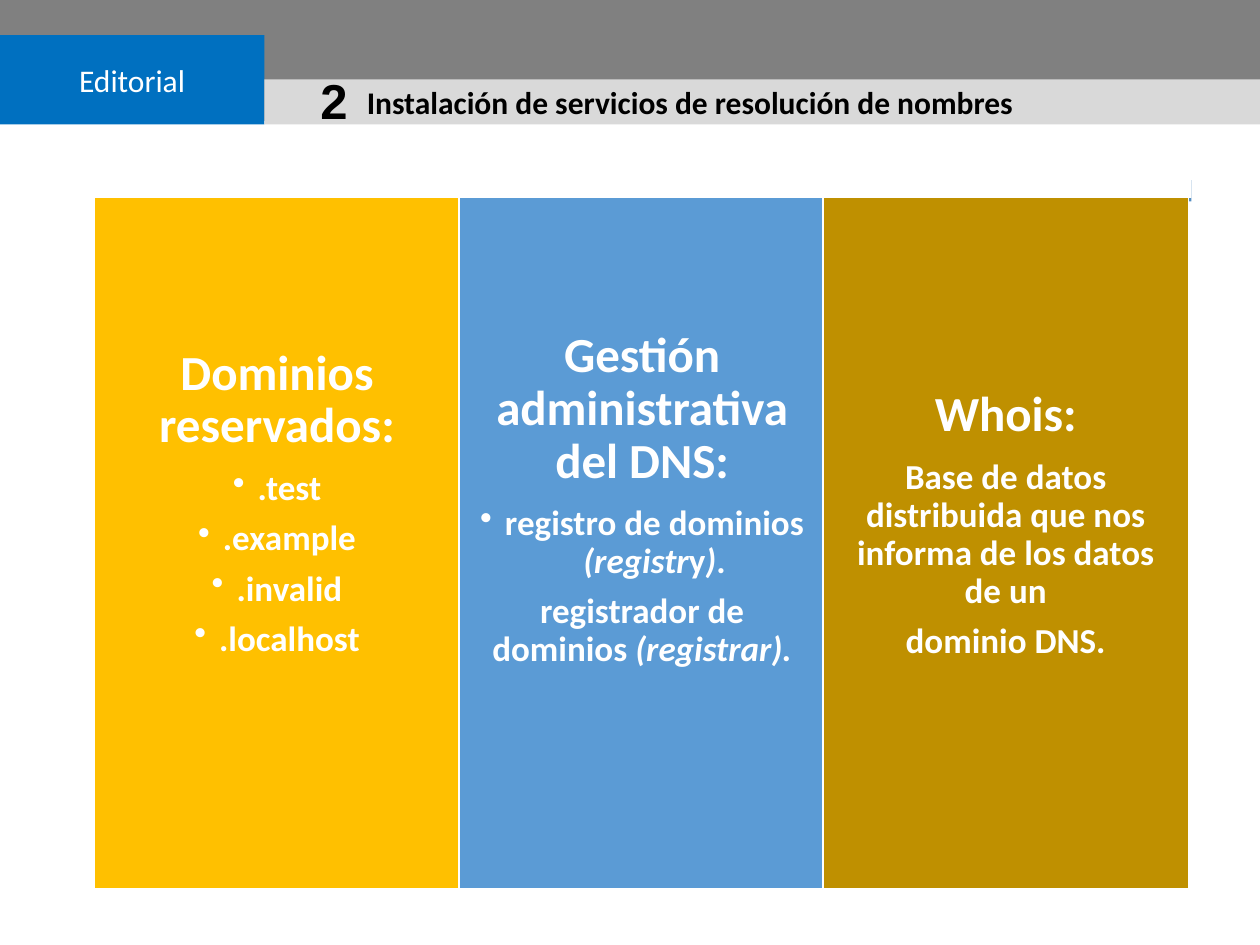
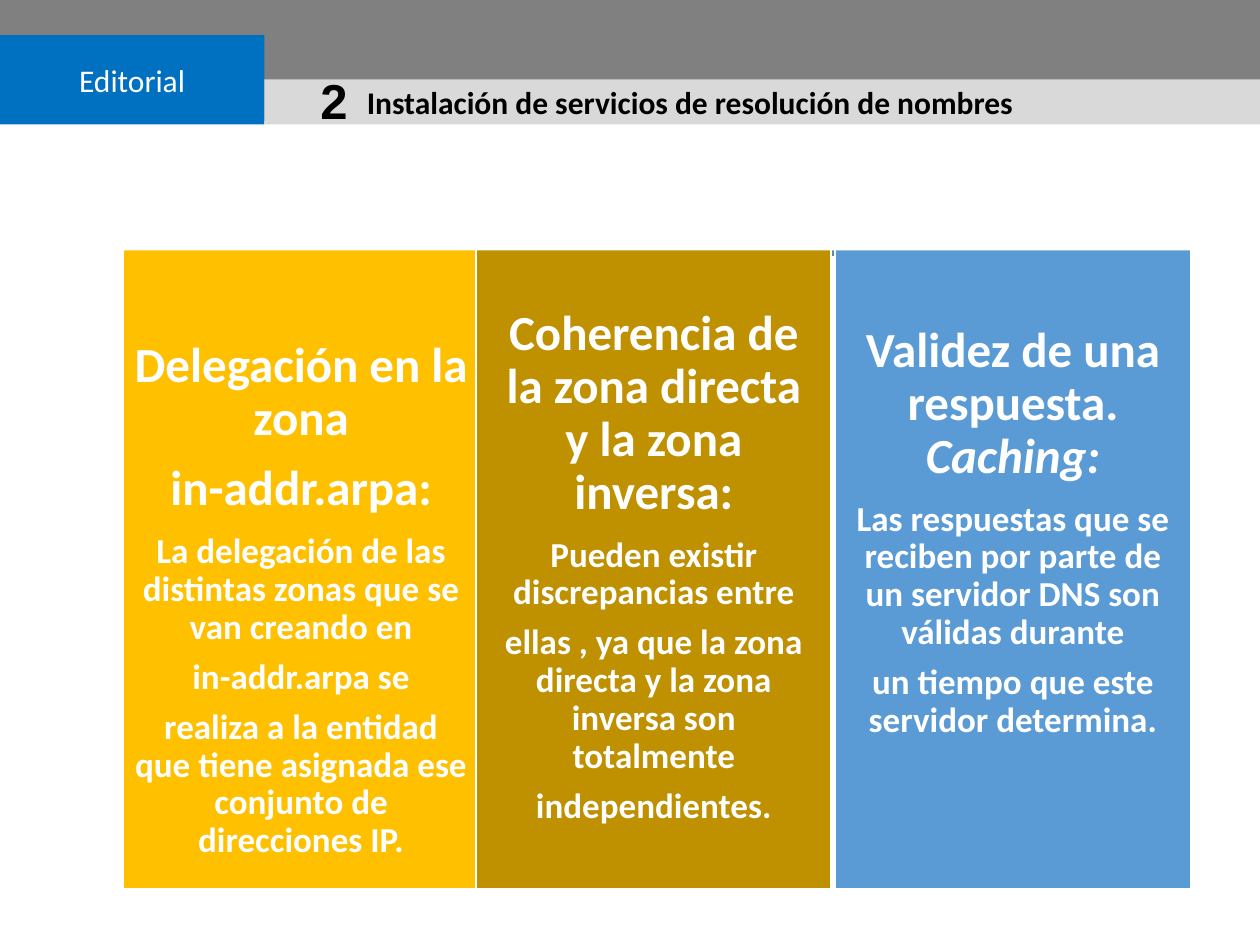
"""Builds two slides of three coloured columns about DNS domains, zones and answers."""
from lxml import etree
from pptx import Presentation
from pptx.dml.color import RGBColor
from pptx.enum.shapes import MSO_SHAPE
from pptx.enum.text import MSO_ANCHOR, MSO_AUTO_SIZE, PP_ALIGN
from pptx.oxml.ns import qn
from pptx.util import Cm, Pt

RECT = MSO_SHAPE.RECTANGLE
TOP, MIDDLE = MSO_ANCHOR.TOP, MSO_ANCHOR.MIDDLE
LEFT, CENTER = PP_ALIGN.LEFT, PP_ALIGN.CENTER
NO_FIT = MSO_AUTO_SIZE.NONE

WHITE = RGBColor(0xFF, 0xFF, 0xFF)
BLACK = RGBColor(0x00, 0x00, 0x00)
GRAY = RGBColor(0x80, 0x80, 0x80)
LIGHT_GRAY = RGBColor(0xD9, 0xD9, 0xD9)
BLUE = RGBColor(0x00, 0x70, 0xC0)
STRIP_BLUE = RGBColor(0x53, 0x8D, 0xC1)
YELLOW = RGBColor(0xFF, 0xC0, 0x00)
SKY = RGBColor(0x5B, 0x9B, 0xD5)
OCHRE = RGBColor(0xBF, 0x90, 0x00)

HEAD, BODY, BULLET = "head", "body", "bullet"
SIZES = {HEAD: 28, BODY: 20, BULLET: 20}
TITLE = "Instalación de servicios de resolución de nombres"

BANDS = [
    (0, 0, 25.4, 2.44, GRAY, None),
    (0, 0.71, 5.33, 1.8, BLUE, ("Editorial", "Calibri", 18, WHITE, False)),
    (5.33, 1.6, 20.07, 0.91, LIGHT_GRAY, None),
    (5.44, 1.63, 2.59, 0.79, LIGHT_GRAY, ("2", "Arial", 28, BLACK, True)),
]

# Runs in a paragraph alternate between upright and italic.
SLIDES = [
    dict(top=3.35, width=7.37, height=14.58, strip=(22.12, 0.43), cover=0.64, columns=[
        (1.9, YELLOW, 0.2, 3.66, [
            (HEAD, ["Dominios reservados:"]),
            (BULLET, [".test"]),
            (BULLET, [".example"]),
            (BULLET, [".invalid"]),
            (BULLET, [".localhost"])]),
        (9.26, SKY, 0.3, 3.3, [
            (HEAD, ["Gestión administrativa del DNS:"]),
            (BULLET, ["registro de dominios ", "(registr", "y", ")", "."]),
            (BODY, ["registrador de dominios ", "(registrar)."])]),
        (16.59, OCHRE, 0.3, 4.5, [
            (HEAD, ["Whois:"]),
            (BODY, ["Base de datos distribuida que nos informa de los datos de un"]),
            (BODY, ["dominio DNS."])]),
    ]),
    dict(top=4.47, width=7.16, height=13.46, strip=(21.51, 0.41), cover=0.58, columns=[
        (2.49, YELLOW, 0.2, 2.39, [
            (HEAD, ["Delegación en la zona"]),
            (HEAD, ["in-addr.arpa:"]),
            (BODY, ["La delegación de las distintas zonas que se van creando en"]),
            (BODY, ["in-addr.arpa se"]),
            (BODY, ["realiza a la entidad que tiene asignada ese conjunto de direcciones IP."])]),
        (9.6, OCHRE, 0.3, 1.74, [
            (HEAD, ["Coherencia de la zona directa y la zona inversa:"]),
            (BODY, ["Pueden existir discrepancias entre"]),
            (BODY, ["ellas , ya que la zona directa y la zona inversa son totalmente"]),
            (BODY, ["independientes."])]),
        (16.84, SKY, 0.3, 2.08, [
            (HEAD, ["Validez de una respuesta. ", "Caching:"]),
            (BODY, ["Las respuestas que se reciben por parte de un servidor DNS son "
                    "válidas durante"]),
            (BODY, ["un tiempo que este servidor determina."])]),
    ]),
]


def add_rect(s, left, top, width, height, fill, line=None):
    sp = s.shapes.add_shape(RECT, Cm(left), Cm(top), Cm(width), Cm(height))
    sp.shadow.inherit = False
    sp.fill.solid()
    sp.fill.fore_color.rgb = fill
    if line is None:
        sp.line.fill.background()
    else:
        sp.line.color.rgb = line
        sp.line.width = Pt(1)
    return sp


def add_run(p, text, font, size, color, bold, italic=False):
    r = p.add_run()
    r.text = text
    r.font.name = font
    r.font.size = Pt(size)
    r.font.color.rgb = color
    r.font.bold = bold
    r.font.italic = italic


prs = Presentation()
prs.slide_width, prs.slide_height = Cm(25.4), Cm(19.05)

for data in SLIDES:
    s = prs.slides.add_slide(prs.slide_layouts[5])

    for left, top, width, height, fill, label in BANDS:
        sp = add_rect(s, left, top, width, height, fill)
        if label:
            tf = sp.text_frame
            tf.vertical_anchor = MIDDLE
            p = tf.paragraphs[0]
            p.alignment = CENTER
            add_run(p, *label)

    title = s.shapes.title
    title.left, title.top, title.width, title.height = Cm(7.14), Cm(1.55), Cm(16.79), Cm(1.02)
    s.shapes.element.append(title.element)
    tf = title.text_frame
    tf.auto_size = NO_FIT
    tf.vertical_anchor = TOP
    p = tf.paragraphs[0]
    p.alignment = LEFT
    add_run(p, TITLE, "Calibri", 18, BLACK, True)

    first_left = data["columns"][0][0]
    strip_width, strip_height = data["strip"]
    add_rect(s, first_left, data["top"] + 0.28, strip_width, strip_height, STRIP_BLUE)

    for left, fill, side_inset, top_inset, paragraphs in data["columns"]:
        sp = add_rect(s, left, data["top"], data["width"], data["height"], fill, WHITE)
        tf = sp.text_frame
        tf.word_wrap = True
        tf.vertical_anchor = TOP
        tf.margin_left = tf.margin_right = Cm(side_inset)
        tf.margin_top, tf.margin_bottom = Cm(top_inset), Cm(0)
        for i, (kind, runs) in enumerate(paragraphs):
            p = tf.add_paragraph() if i else tf.paragraphs[0]
            if kind == BULLET:
                pPr = p._p.get_or_add_pPr()
                pPr.set("marL", str(Cm(0.5)))
                pPr.set("indent", str(-Cm(0.5)))
                etree.SubElement(pPr, qn("a:buChar")).set("char", "•")
            p.alignment = CENTER
            p.line_spacing = 0.9
            p.space_after = Pt(SIZES[kind] * 0.35)
            for j, text in enumerate(runs):
                add_run(p, text, "Calibri", SIZES[kind], WHITE, True, j % 2 == 1)

    add_rect(s, first_left, data["top"], strip_width, data["cover"], WHITE)

prs.save("out.pptx")
